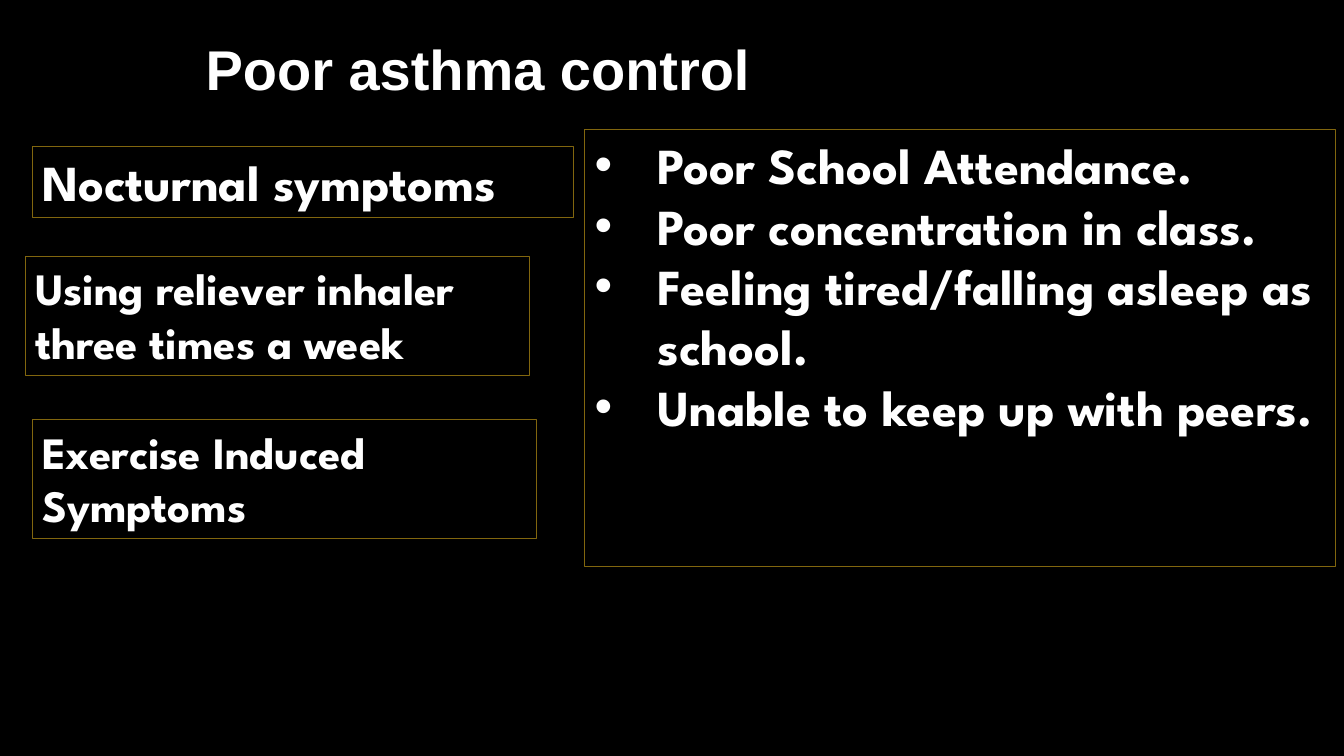
import dataclasses

import lxml.etree
import pptx
import pptx.dml.color
import pptx.enum.shapes
import pptx.enum.text
import pptx.oxml.ns
import pptx.util

BLACK = pptx.dml.color.RGBColor(0x00, 0x00, 0x00)
WHITE = pptx.dml.color.RGBColor(0xFF, 0xFF, 0xFF)
GOLD = pptx.dml.color.RGBColor(0x81, 0x66, 0x0E)
HEADING_FONT = "Arial"
BODY_FONT = "League Spartan"
BULLET_INDENT = pptx.util.Pt(45)


@dataclasses.dataclass(frozen=True)
class Area:
    left: float
    top: float
    width: float
    height: float


@dataclasses.dataclass(frozen=True)
class SymptomBox:
    text: str
    area: Area
    size: float


TITLE_AREA = Area(139.7, 25.9, 519.8, 51.1)
EFFECTS_AREA = Area(417.6, 92.2, 536.4, 312.5)
SYMPTOMS = [
    SymptomBox("Nocturnal symptoms", Area(23, 104.4, 386.6, 51.1), 36),
    SymptomBox("Using reliever inhaler three times a week", Area(18, 182.9, 360, 85), 32),
    SymptomBox("Exercise Induced Symptoms", Area(23, 299.5, 360, 85), 32),
]
EFFECTS = [
    "Poor School Attendance.",
    "Poor concentration in class.",
    "Feeling tired/falling asleep as school.",
    "Unable to keep up with peers.",
]


def place(box, area: Area) -> None:
    box.left = pptx.util.Pt(area.left)
    box.top = pptx.util.Pt(area.top)
    box.width = pptx.util.Pt(area.width)
    box.height = pptx.util.Pt(area.height)


def prepare_frame(box, anchor=pptx.enum.text.MSO_ANCHOR.TOP):
    frame = box.text_frame
    frame.word_wrap = True
    frame.auto_size = pptx.enum.text.MSO_AUTO_SIZE.NONE
    frame.vertical_anchor = anchor
    return frame


def outline(box) -> None:
    box.line.color.rgb = GOLD
    box.line.width = pptx.util.Pt(0.75)


def write(para, text: str, font: str, size: float) -> None:
    para.alignment = pptx.enum.text.PP_ALIGN.LEFT
    para.space_before = pptx.util.Pt(0)
    span = para.add_run()
    span.text = text
    span.font.name = font
    span.font.size = pptx.util.Pt(size)
    span.font.bold = True
    span.font.color.rgb = WHITE


def add_bullet(para) -> None:
    properties = para._p.get_or_add_pPr()
    properties.set("marL", str(BULLET_INDENT))
    properties.set("indent", str(-BULLET_INDENT))
    font = lxml.etree.SubElement(properties, pptx.oxml.ns.qn("a:buFont"))
    font.set("typeface", HEADING_FONT)
    bullet = lxml.etree.SubElement(properties, pptx.oxml.ns.qn("a:buChar"))
    bullet.set("char", "•")


def fill_title(box) -> None:
    place(box, TITLE_AREA)
    frame = prepare_frame(box, pptx.enum.text.MSO_ANCHOR.MIDDLE)
    para = frame.paragraphs[0]
    para.line_spacing = 0.9
    write(para, "Poor asthma control", HEADING_FONT, 40)


def fill_effects(box) -> None:
    place(box, EFFECTS_AREA)
    outline(box)
    frame = prepare_frame(box)
    for index, effect in enumerate(EFFECTS):
        para = frame.add_paragraph() if index else frame.paragraphs[0]
        add_bullet(para)
        write(para, effect, BODY_FONT, 36)


def add_symptom(page, symptom: SymptomBox) -> None:
    box = page.shapes.add_shape(pptx.enum.shapes.MSO_SHAPE.RECTANGLE, 0, 0, 0, 0)
    place(box, symptom.area)
    box.shadow.inherit = False
    box.fill.background()
    outline(box)
    frame = prepare_frame(box)
    write(frame.paragraphs[0], symptom.text, BODY_FONT, symptom.size)


def main() -> None:
    deck = pptx.Presentation()
    deck.slide_width = pptx.util.Pt(960)
    deck.slide_height = pptx.util.Pt(540)
    page = deck.slides.add_slide(deck.slide_layouts[1])
    page.background.fill.solid()
    page.background.fill.fore_color.rgb = BLACK
    fill_title(page.shapes.title)
    fill_effects(page.placeholders[1])
    for symptom in SYMPTOMS:
        add_symptom(page, symptom)
    deck.save("out.pptx")


if __name__ == "__main__":
    main()
